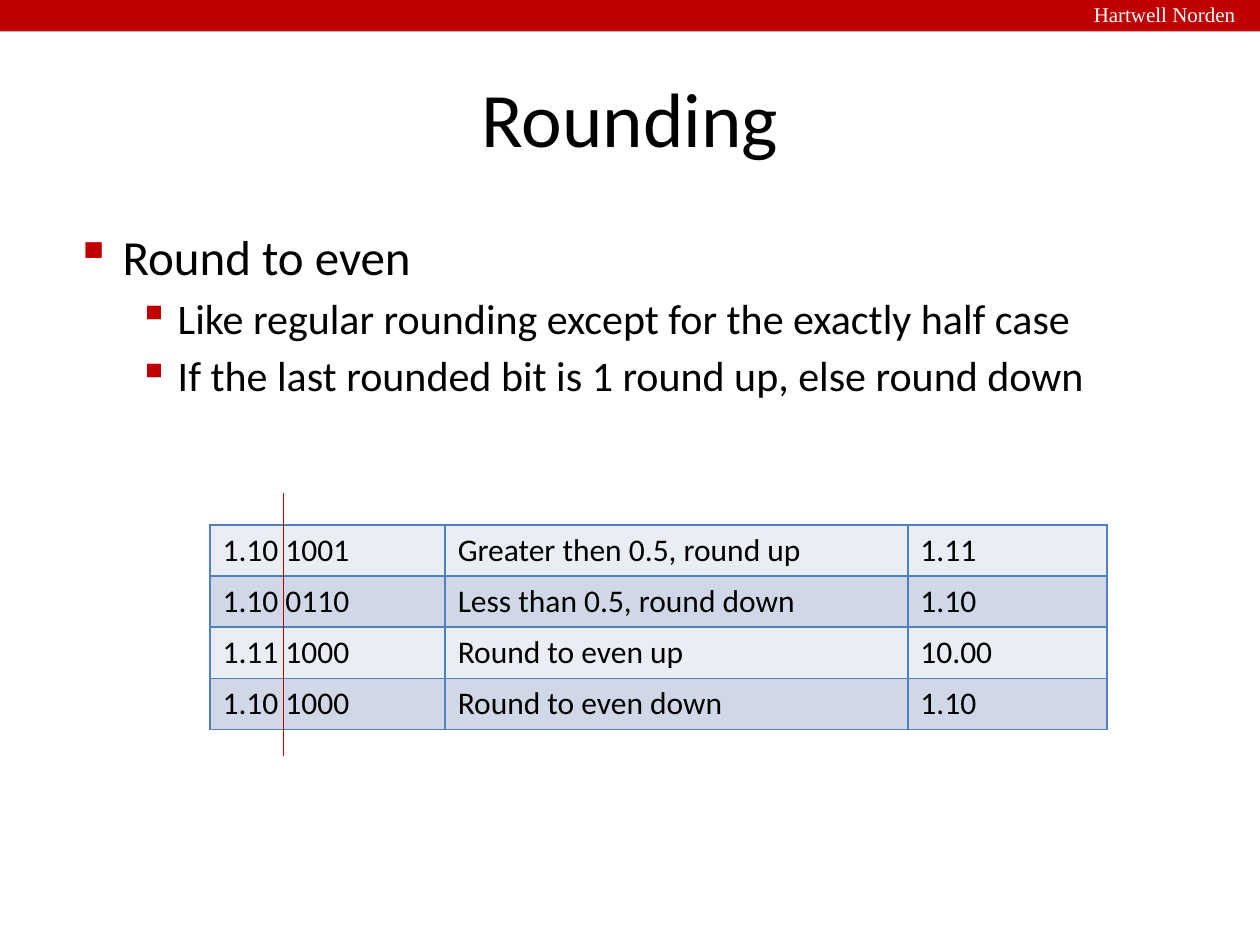
from pptx import Presentation
from pptx.dml.color import RGBColor
from pptx.enum.shapes import MSO_CONNECTOR as CONNECTOR, MSO_SHAPE as SHAPE
from pptx.enum.text import MSO_ANCHOR as ANCHOR, PP_ALIGN as ALIGN
from pptx.oxml.ns import qn
from pptx.util import Pt
from lxml.etree import SubElement

RED = RGBColor(0xC0, 0x00, 0x00)
BLACK = RGBColor(0x00, 0x00, 0x00)
WHITE = RGBColor(0xFF, 0xFF, 0xFF)
BORDER = RGBColor(0x4F, 0x81, 0xBD)
BANDS = (RGBColor(0xE9, 0xED, 0xF4), RGBColor(0xD0, 0xD8, 0xE8))

# Bullet format by level: text size, left margin, hanging indent, space before
LEVELS = (
    {"size": 28, "margin": 27, "hang": 27, "before": 5},
    {"size": 24, "margin": 58.5, "hang": 22.5, "before": 4},
)
BULLETS = (
    (0, "Round to even"),
    (1, "Like regular rounding except for the exactly half case"),
    (1, "If the last rounded bit is 1 round up, else round down"),
)
COLUMN_WIDTHS = (134.4, 264.4, 113.8)
ROW_HEIGHT = 29.2
ROUNDING_CASES = (
    ("1.10 1001", "Greater then 0.5, round up", "1.11"),
    ("1.10 0110", "Less than 0.5, round down", "1.10"),
    ("1.11 1000", "Round to even up", "10.00"),
    ("1.10 1000", "Round to even down", "1.10"),
)


def points(*lengths):
    return [Pt(length) for length in lengths]


def add_span(para, text, size, color=BLACK, name="Calibri"):
    span = para.add_run()
    span.text = text
    for key, value in {"size": Pt(size), "name": name}.items():
        setattr(span.font, key, value)
    span.font.color.rgb = color


def add_box(page, place, **frame_format):
    frame = page.shapes.add_textbox(*points(*place)).text_frame
    for key, value in {"word_wrap": True, **frame_format}.items():
        setattr(frame, key, value)
    return frame


def add_header(page):
    band = page.shapes.add_shape(SHAPE.RECTANGLE, *points(0, 0, 720, 18))
    band.shadow.inherit = False
    band.fill.solid()
    band.fill.fore_color.rgb = RED
    band.line.fill.background()
    margins = {f"margin_{side}": Pt(3) for side in ("left", "top", "right", "bottom")}
    frame = add_box(page, (622, -2, 104, 20), **margins)
    add_span(frame.paragraphs[0], "Hartwell Norden", 12, WHITE, "Times New Roman")


def add_title(page, text):
    frame = add_box(page, (36, 21.6, 648, 90), vertical_anchor=ANCHOR.MIDDLE)
    para = frame.paragraphs[0]
    para.alignment = ALIGN.CENTER
    add_span(para, text, 44)


def add_bullets(page, items):
    frame = add_box(page, (36, 126, 648, 114))
    for index, (level, text) in enumerate(items):
        para = frame.add_paragraph() if index else frame.paragraphs[0]
        style = LEVELS[level]
        para.level = level
        para.space_before = Pt(style["before"])
        add_span(para, text, style["size"])
        # Bullet sign and hanging indent
        props = para._p.get_or_add_pPr()
        props.set("marL", str(Pt(style["margin"])))
        props.set("indent", str(-Pt(style["hang"])))
        color = SubElement(props, qn("a:buClr"))
        SubElement(color, qn("a:srgbClr"), val=str(RED))
        SubElement(props, qn("a:buChar"), char="▪")


def set_borders(cell):
    props = cell._tc.get_or_add_tcPr()
    for index, side in enumerate(("lnL", "lnR", "lnT", "lnB")):
        line = props.makeelement(qn(f"a:{side}"), {"w": str(Pt(1))})
        fill = SubElement(line, qn("a:solidFill"))
        SubElement(fill, qn("a:srgbClr"), val=str(BORDER))
        props.insert(index, line)


def add_case_table(page, rows):
    size = (sum(COLUMN_WIDTHS), ROW_HEIGHT * len(rows))
    table = page.shapes.add_table(
        len(rows), len(COLUMN_WIDTHS), *points(120, 300, *size)).table
    table.first_row = False
    for column, width in zip(table.columns, COLUMN_WIDTHS):
        column.width = Pt(width)
    for row_index, row in enumerate(rows):
        table.rows[row_index].height = Pt(ROW_HEIGHT)
        for column_index, text in enumerate(row):
            cell = table.cell(row_index, column_index)
            cell.fill.solid()
            cell.fill.fore_color.rgb = BANDS[row_index % 2]
            add_span(cell.text_frame.paragraphs[0], text, 18)
            set_borders(cell)


def add_line(page, start, end):
    line = page.shapes.add_connector(CONNECTOR.STRAIGHT, *points(*start, *end))
    line.line.color.rgb = RED
    line.line.width = Pt(0.75)
    SubElement(line._element.spPr, qn("a:effectLst"))


def main():
    deck = Presentation()
    deck.slide_width, deck.slide_height = points(720, 540)
    page = deck.slides.add_slide(deck.slide_layouts[6])
    add_header(page)
    add_title(page, "Rounding")
    add_case_table(page, ROUNDING_CASES)
    add_bullets(page, BULLETS)
    # Rounding position between kept and dropped bits
    add_line(page, (162, 282), (162, 432))
    deck.save("out.pptx")


main()
